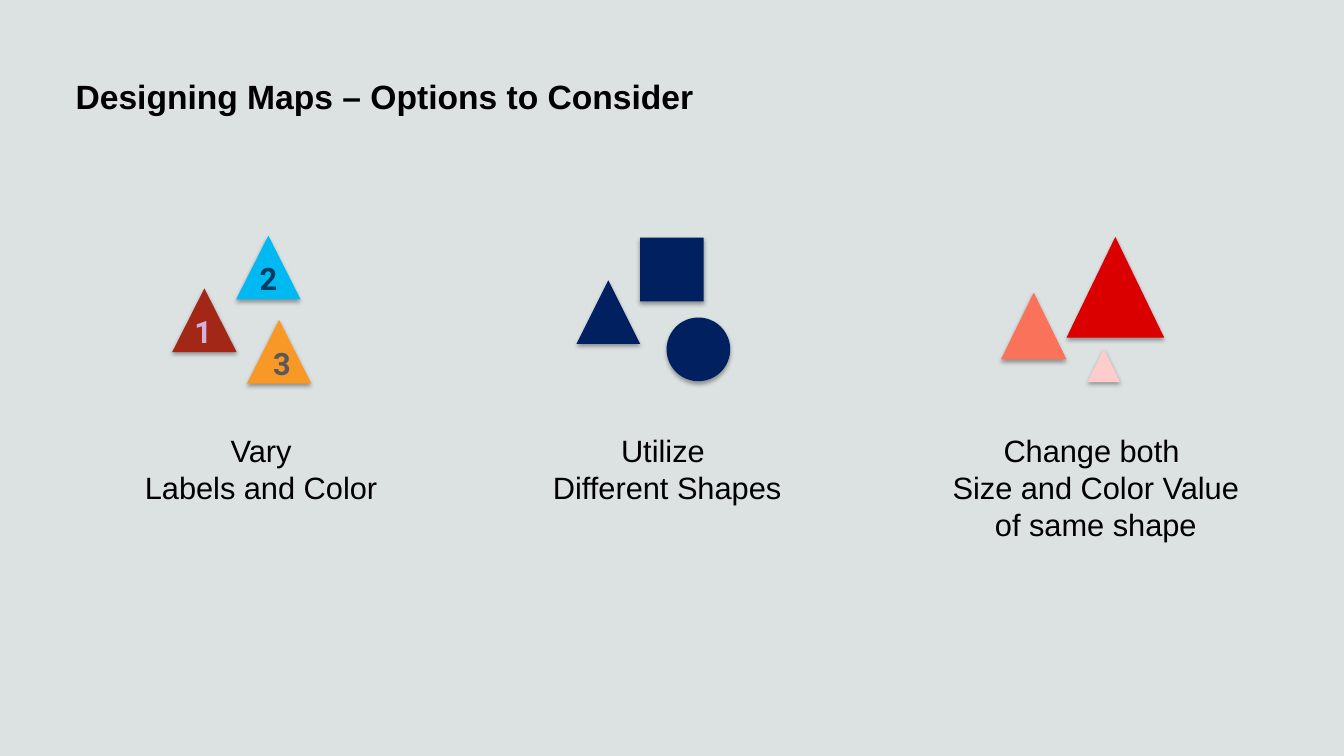
import pptx
import pptx.util
import pptx.dml.color
import pptx.enum.shapes
import pptx.enum.text
import pptx.oxml
import pptx.oxml.ns

Pt = pptx.util.Pt
RGB = pptx.dml.color.RGBColor
Kind = pptx.enum.shapes.MSO_SHAPE
Align = pptx.enum.text.PP_ALIGN
Anchor = pptx.enum.text.MSO_ANCHOR

PALE = RGB(0xDC, 0xE1, 0xE2)
BLACK = RGB(0, 0, 0)
RUST = RGB(0xA2, 0x27, 0x16)
SKY = RGB(0x00, 0xB9, 0xF2)
AMBER = RGB(0xF8, 0x99, 0x27)
LILAC = RGB(0xD4, 0xB2, 0xDB)
DEEP = RGB(0x00, 0x3D, 0x61)
GREY = RGB(0x59, 0x59, 0x59)
NAVY = RGB(0x00, 0x20, 0x60)
CORAL = RGB(0xFA, 0x72, 0x5A)
RED = RGB(0xDB, 0x00, 0x00)
PINK = RGB(0xFF, 0xCC, 0xCC)

TITLE = "Designing Maps – Options to Consider"
TRI = Kind.ISOSCELES_TRIANGLE
OPTIONS = [
    {
        "marks": [
            (TRI, 123, 206, 46, 45.5, RUST),
            (TRI, 168.7, 168.3, 46, 45.5, SKY),
            (TRI, 176.4, 228.5, 46, 45.5, AMBER),
        ],
        "digits": [
            ("1", 131.8, 219.6, LILAC),
            ("2", 178.4, 182.2, DEEP),
            ("3", 188, 242.6, GREY),
        ],
        "label": ["Vary", "Labels and Color"],
        "box": (95, 304.7, 183),
    },
    {
        "marks": [
            (TRI, 411.8, 200.2, 45.5, 45.5, NAVY),
            (Kind.RECTANGLE, 457.2, 169.8, 45.5, 45.5, NAVY),
            (Kind.OVAL, 476.1, 226.8, 45.5, 45.5, NAVY),
        ],
        "digits": [],
        "label": ["Utilize ", "Different Shapes"],
        "box": (386.6, 304.9, 180),
    },
    {
        "marks": [
            (TRI, 715, 209, 46.8, 47.7, CORAL),
            (TRI, 761.8, 169.2, 69.8, 72, RED),
            (TRI, 776.9, 249.2, 23.2, 23.7, PINK),
        ],
        "digits": [],
        "label": ["Change both ", "Size and Color Value", "of same shape"],
        "box": (671.8, 304.7, 221.8),
    },
]
SIZE = 22
LINE = 26.6
PAD = 7.2
DIGIT = 26.6

SHADOW = (
    "<a:effectLst %s>"
    '<a:outerShdw blurRad="40000" dist="23000" dir="5400000" rotWithShape="0">'
    '<a:srgbClr val="000000"><a:alpha val="35000"/></a:srgbClr>'
    "</a:outerShdw></a:effectLst>" % pptx.oxml.ns.nsdecls("a")
)


def add_mark(group, kind, left, top, width, height, color):
    mark = group.shapes.add_shape(kind, Pt(left), Pt(top), Pt(width), Pt(height))
    mark.fill.solid()
    mark.fill.fore_color.rgb = color
    mark.line.fill.background()
    mark._element.spPr.append(pptx.oxml.parse_xml(SHADOW))


def add_text(group, lines, left, top, width, face, color, bold=False):
    height = LINE * len(lines) + PAD
    box = group.shapes.add_textbox(Pt(left), Pt(top), Pt(width), Pt(height))
    frame = box.text_frame
    frame.word_wrap = False
    frame.text = "\n".join(lines)
    for para in frame.paragraphs:
        para.alignment = Align.CENTER
        style(para.font, face, SIZE, color, bold)


def style(font, face, size, color, bold):
    font.name = face
    font.size = Pt(size)
    font.color.rgb = color
    font.bold = bold


def set_title(slide):
    title = slide.shapes.title
    title.left, title.top = Pt(54), Pt(54)
    title.width, title.height = Pt(852.5), Pt(28.8)
    frame = title.text_frame
    frame.text = TITLE
    frame.margin_left = frame.margin_right = 0
    frame.margin_top = frame.margin_bottom = 0
    frame.vertical_anchor = Anchor.MIDDLE
    para = frame.paragraphs[0]
    para.alignment = Align.LEFT
    style(para.font, "Arial", 24, BLACK, True)


def main():
    deck = pptx.Presentation()
    deck.slide_width, deck.slide_height = Pt(960), Pt(540)
    slide = deck.slides.add_slide(deck.slide_layouts[5])
    slide.background.fill.solid()
    slide.background.fill.fore_color.rgb = PALE
    set_title(slide)
    for option in OPTIONS:
        group = slide.shapes.add_group_shape()
        for mark in option["marks"]:
            add_mark(group, *mark)
        for digit, left, top, color in option["digits"]:
            add_text(group, [digit], left, top, DIGIT, "Roboto", color, True)
        add_text(group, option["label"], *option["box"], "Arial", BLACK)
    deck.save("out.pptx")


if __name__ == "__main__":
    main()
